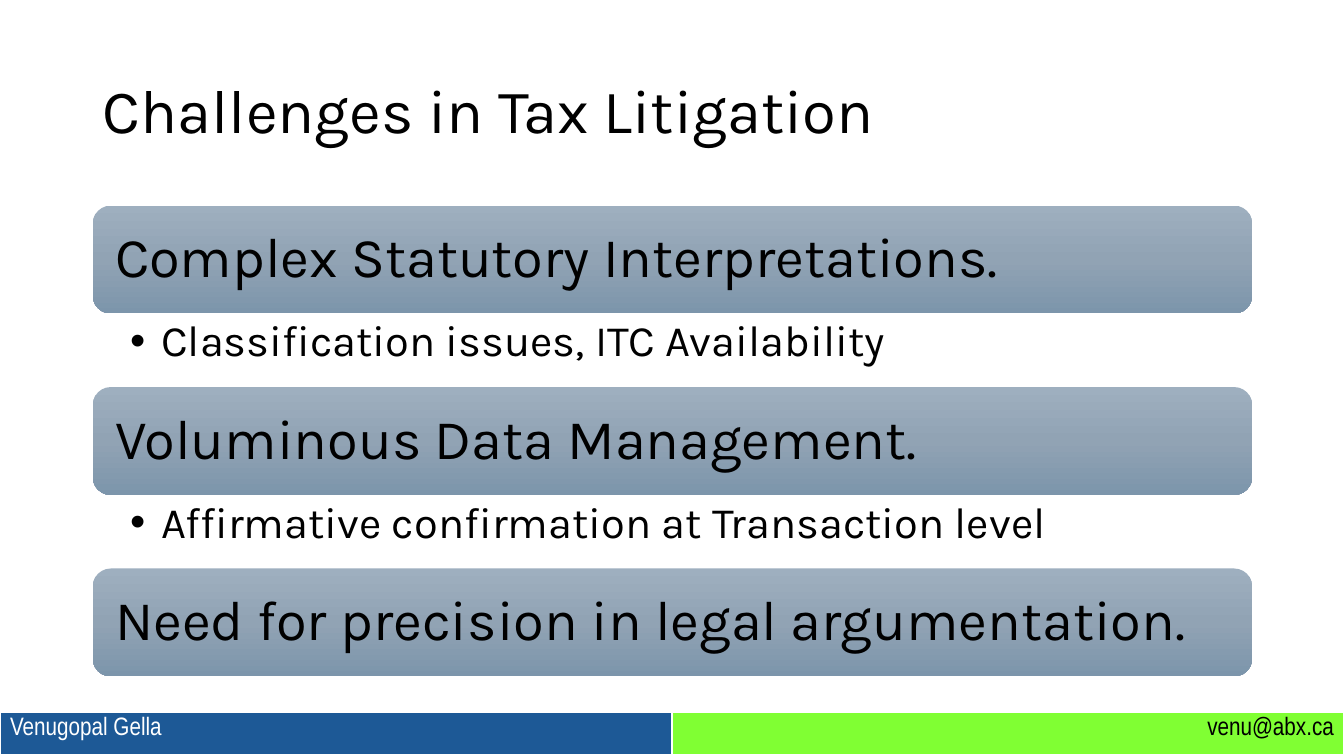
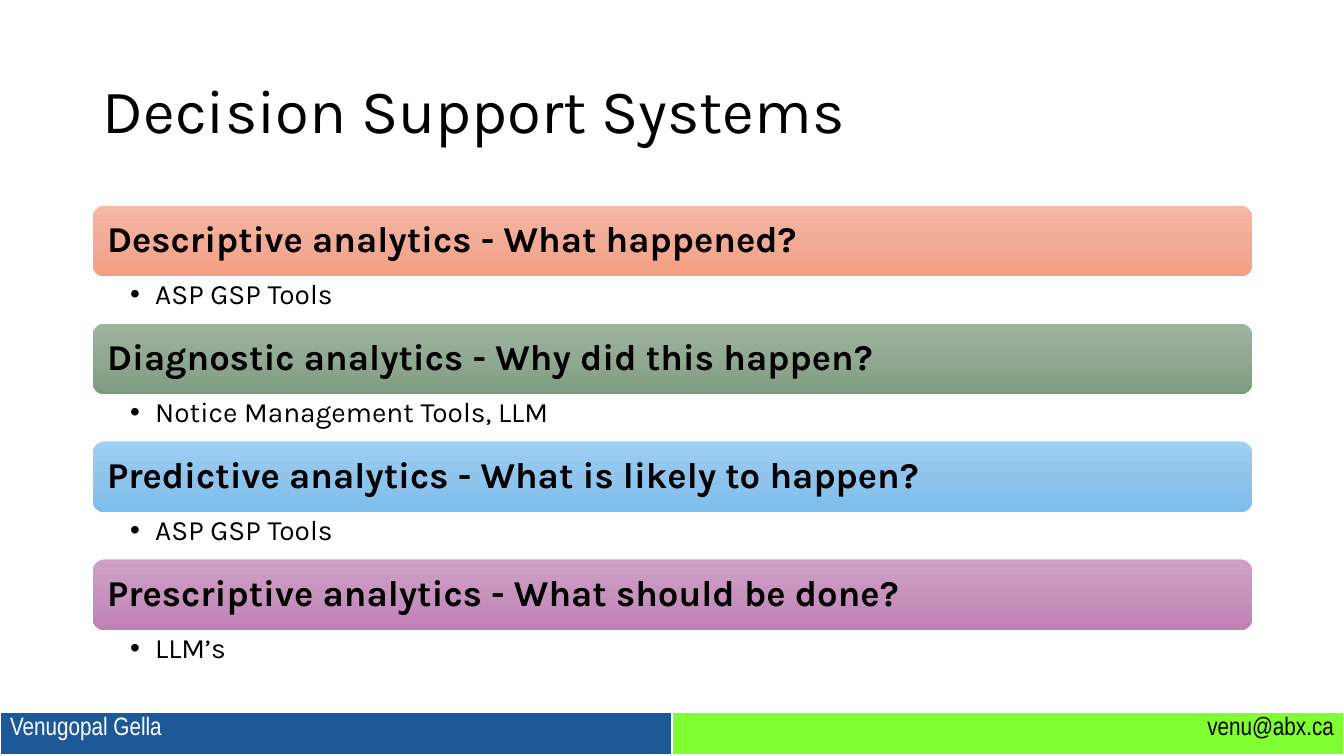
from dataclasses import dataclass

from lxml.etree import SubElement
from copy import deepcopy
from pptx import Presentation
from pptx.dml.color import RGBColor
from pptx.enum.shapes import MSO_SHAPE as SHAPE
from pptx.enum.text import MSO_ANCHOR as ANCHOR, MSO_AUTO_SIZE as AUTO_SIZE, PP_ALIGN as ALIGN
from pptx.oxml.ns import qn
from pptx.util import Inches, Pt

# Shared look
WIDTH, HEIGHT = 13.33, 7.5
LEFT, CONTENT_WIDTH = 0.92, 11.5
TITLE_TOP, TITLE_HEIGHT, LIST_TOP = 0.4, 1.45, 2.04
FOOTER_HEIGHT = 0.43
BODY_FONT, FOOTER_FONT = "Karla", "Arial Narrow"

BLACK = RGBColor(0x00, 0x00, 0x00)
WHITE = RGBColor(0xFF, 0xFF, 0xFF)
NAVY = RGBColor(0x1D, 0x59, 0x96)
LIME = RGBColor(0x80, 0xFF, 0x33)

# Bar gradients, from top to bottom
SLATE = [RGBColor(0x9E, 0xAF, 0xBF), RGBColor(0x91, 0xA3, 0xB4), RGBColor(0x7C, 0x95, 0xAB)]
CORAL = [RGBColor(0xF5, 0xB8, 0xA5), RGBColor(0xF2, 0xAB, 0x96), RGBColor(0xF5, 0x9E, 0x82)]
SAGE = [RGBColor(0x9E, 0xB4, 0x9F), RGBColor(0x91, 0xA8, 0x92), RGBColor(0x7D, 0x9C, 0x7E)]
SKY = [RGBColor(0x9E, 0xCF, 0xF5), RGBColor(0x90, 0xC4, 0xEB), RGBColor(0x7C, 0xBE, 0xED)]
ORCHID = [RGBColor(0xD0, 0xA0, 0xC8), RGBColor(0xC6, 0x93, 0xBD), RGBColor(0xC1, 0x7F, 0xB6)]


@dataclass
class ListStyle:
    """Sizes of a list of bars with a bullet below each."""
    bar_height: float
    note_height: float
    bar_size: int
    note_size: int
    bar_inset: float
    note_inset: float
    indent: float
    bold: bool


LARGE = ListStyle(1.07, 0.73, 40, 31, 0.17, 0.06, 0.31, False)
COMPACT = ListStyle(0.7, 0.47, 26, 20, 0.11, 0.04, 0.25, True)


def write(para, text, size, color=BLACK, font=BODY_FONT, bold=False, align=ALIGN.LEFT):
    para.alignment = align
    span = para.add_run()
    span.text = text
    span.font.size, span.font.name, span.font.bold = Pt(size), font, bold
    span.font.color.rgb = color


def set_frame(frame, anchor, left, top, right, bottom):
    frame.word_wrap = True
    frame.auto_size = AUTO_SIZE.NONE
    frame.vertical_anchor = anchor
    frame.margin_left, frame.margin_right = Inches(left), Inches(right)
    frame.margin_top, frame.margin_bottom = Inches(top), Inches(bottom)
    para = frame.paragraphs[0]
    para.line_spacing = 0.9
    return para


def fill_gradient(shape, colors):
    shape.fill.gradient()
    shape.fill.gradient_angle = 270
    stop_list = shape._element.spPr.find(qn("a:gradFill")).find(qn("a:gsLst"))
    middle = deepcopy(stop_list[0])
    middle.set("pos", "50000")
    stop_list.insert(1, middle)
    for stop, color in zip(shape.fill.gradient_stops, colors):
        stop.color.rgb = color


def set_borders(cell):
    properties = cell._tc.get_or_add_tcPr()
    for index, (side, points) in enumerate([("L", 1), ("R", 1), ("T", 1), ("B", 3)]):
        line = SubElement(properties, qn(f"a:ln{side}"), w=str(Pt(points)))
        solid = SubElement(line, qn("a:solidFill"))
        SubElement(solid, qn("a:srgbClr"), val=str(WHITE))
        properties.insert(index, line)  # borders precede the cell fill


def add_footer(page):
    table = page.shapes.add_table(
        1, 2, Inches(0), Inches(HEIGHT - FOOTER_HEIGHT), Inches(WIDTH), Inches(FOOTER_HEIGHT)).table
    table.first_row = table.horz_banding = False
    parts = [("Venugopal Gella", WHITE, NAVY, ALIGN.LEFT),
             ("venu@abx.ca", BLACK, LIME, ALIGN.RIGHT)]
    for cell, (text, color, fill, align) in zip(table.iter_cells(), parts):
        cell.fill.solid()
        cell.fill.fore_color.rgb = fill
        set_borders(cell)
        write(cell.text_frame.paragraphs[0], text, 18, color, FOOTER_FONT, align=align)


def add_title(page, text):
    title = page.shapes.title
    title.left, title.top = Inches(LEFT), Inches(TITLE_TOP)
    title.width, title.height = Inches(CONTENT_WIDTH), Inches(TITLE_HEIGHT)
    write(set_frame(title.text_frame, ANCHOR.MIDDLE, 0.1, 0.05, 0.1, 0.05), text, 44)


def add_bar(page, left, top, width, text, colors, style):
    bar = page.shapes.add_shape(SHAPE.ROUNDED_RECTANGLE, Inches(left), Inches(top),
                                Inches(width), Inches(style.bar_height))
    bar.shadow.inherit = False
    bar.line.fill.background()
    fill_gradient(bar, colors)
    para = set_frame(bar.text_frame, ANCHOR.MIDDLE, *[style.bar_inset] * 4)
    write(para, text, style.bar_size, bold=style.bold)


def add_note(page, left, top, width, text, style):
    box = page.shapes.add_textbox(Inches(left), Inches(top), Inches(width), Inches(style.note_height))
    para = set_frame(box.text_frame, ANCHOR.TOP, 0.37, style.note_inset, 0.2, style.note_inset)
    para.level = 1
    write(para, text, style.note_size)
    # Hanging bullet
    properties = para._p.get_or_add_pPr()
    properties.set("marL", str(Inches(style.indent)))
    properties.set("indent", str(-Inches(style.indent)))
    SubElement(properties, qn("a:buFont"), typeface="Arial")
    SubElement(properties, qn("a:buChar"), char="•")


def add_bar_list(page, left, top, width, items, style):
    pitch = style.bar_height + style.note_height
    for index, (heading, note, colors) in enumerate(items):
        bar_top = top + index * pitch
        add_bar(page, left, bar_top, width, heading, colors, style)
        if note:
            add_note(page, left, bar_top + style.bar_height, width, note, style)


def add_list_slide(deck, title, items, style):
    page = deck.slides.add_slide(deck.slide_layouts.get_by_name("Title Only"))
    add_footer(page)
    add_title(page, title)
    add_bar_list(page, LEFT, LIST_TOP, CONTENT_WIDTH, items, style)


def main():
    deck = Presentation()
    deck.slide_width, deck.slide_height = Inches(WIDTH), Inches(HEIGHT)
    add_list_slide(deck, "Challenges in Tax Litigation", [
        ("Complex Statutory Interpretations.", "Classification issues, ITC Availability", SLATE),
        ("Voluminous Data Management.", "Affirmative confirmation at Transaction level", SLATE),
        ("Need for precision in legal argumentation.", None, SLATE),
    ], LARGE)
    add_list_slide(deck, "Decision Support Systems", [
        ("Descriptive analytics - What happened?", "ASP GSP Tools", CORAL),
        ("Diagnostic analytics - Why did this happen?", "Notice Management Tools, LLM", SAGE),
        ("Predictive analytics - What is likely to happen?", "ASP GSP Tools", SKY),
        ("Prescriptive analytics - What should be done?", "LLM’s", ORCHID),
    ], COMPACT)
    deck.save("out.pptx")


if __name__ == "__main__":
    main()
